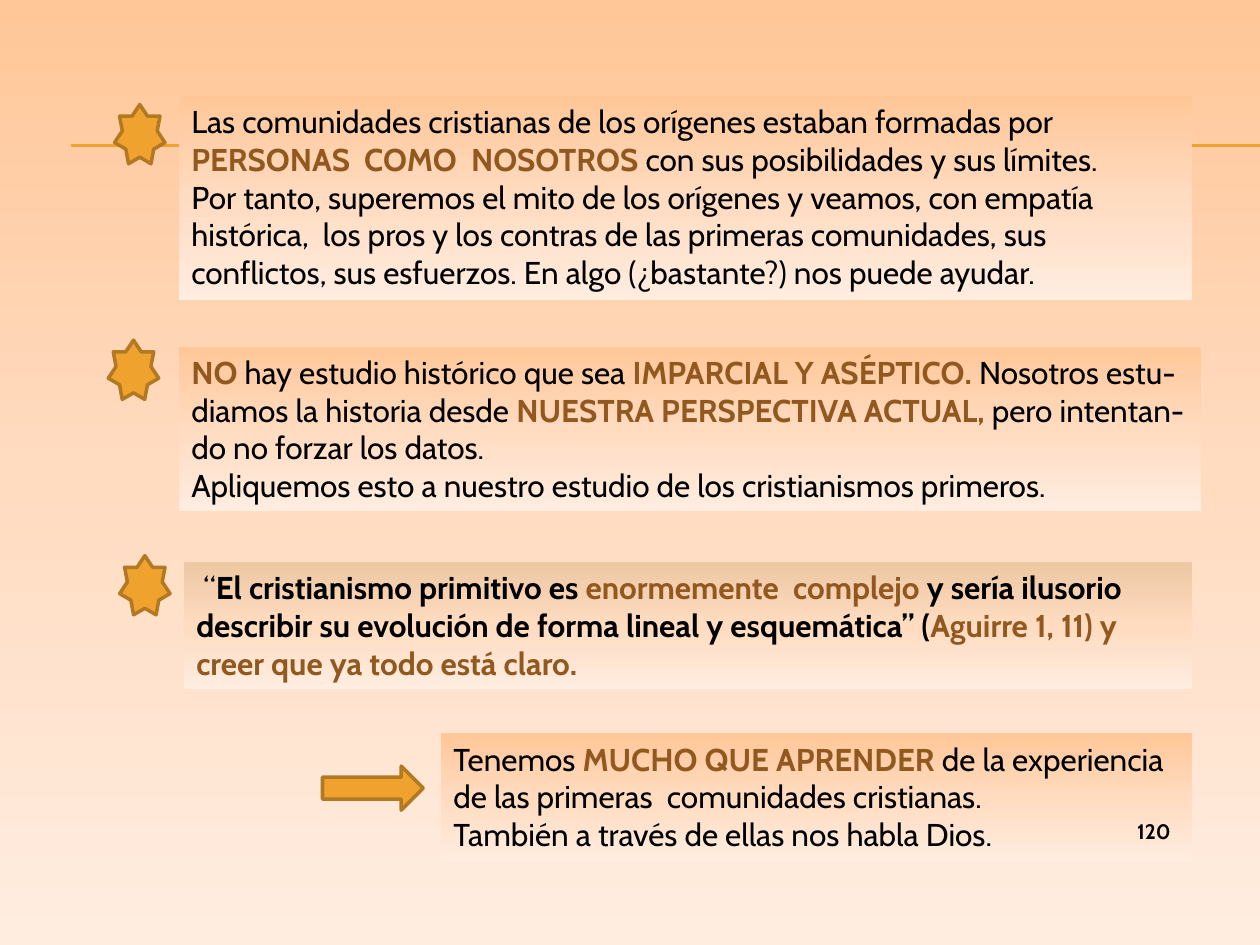
from copy import deepcopy

from pptx import Presentation
from pptx import util as u
from pptx.dml.color import RGBColor
from pptx.enum import shapes, text
from pptx.oxml.ns import qn
from pptx.util import Inches

COLORS = {
    "top": "FFC798", "tan": "ECC8A4", "middle": "FFDBC0", "bottom": "FFEDE0",
    "gold": "F0A22E", "outline": "B27822", "accent": "91581F", "ink": "000000",
}
FONT = "Cabin"
STAR = (0.4, 0.47)
ARROW = (0.8, 0.35)

# Run styles
PLAIN = ("ink", False)
STRONG = ("ink", True)
ACCENT = ("accent", True)

ORIGINS = [
    [("Las comunidades cristianas de los orígenes estaban formadas por ", PLAIN),
     ("PERSONAS  COMO  NOSOTROS", ACCENT),
     (" con sus posibilidades y sus límites.", PLAIN)],
    [("Por tanto, superemos el mito de los orígenes y veamos, con empatía "
      "histórica,  los pros y los contras de las primeras comunidades, sus "
      "conflictos, sus esfuerzos. En algo (¿bastante?) nos puede ayudar.", PLAIN)],
]
PERSPECTIVE = [
    [("NO", ACCENT),
     (" hay estudio histórico que sea ", PLAIN),
     ("IMPARCIAL Y ASÉPTICO. ", ACCENT),
     ("Nosotros estu-diamos la historia desde ", PLAIN),
     ("NUESTRA PERSPECTIVA ACTUAL, ", ACCENT),
     ("pero intentan- do no forzar los datos.", PLAIN)],
    [("Apliquemos esto a nuestro estudio de los cristianismos primeros.", PLAIN)],
]
QUOTE = [
    [(" “", PLAIN),
     ("El cristianismo primitivo es ", STRONG),
     ("enormemente  complejo ", ACCENT),
     ("y sería ilusorio describir su evolución de forma lineal y esquemática” (", STRONG),
     ("Aguirre 1, 11) y creer que ya todo está claro.", ACCENT)],
]
CONCLUSION = [
    [("Tenemos ", PLAIN),
     ("MUCHO QUE APRENDER ", ACCENT),
     ("de la experiencia", PLAIN)],
    [("de las primeras  comunidades cristianas.", PLAIN)],
    [("También a través de ellas nos habla Dios.", PLAIN)],
]


def rgb(name):
    return RGBColor.from_string(COLORS[name])


def fill_gradient(fill, parent, first="top"):
    """Give fill three stops running downwards; parent is the element holding it."""
    fill.gradient()
    fill.gradient_angle = 270
    stop_list = next(parent.iter(qn("a:gsLst")))
    stop_list.insert(1, deepcopy(stop_list[0]))
    for stop, position, name in zip(fill.gradient_stops, (0, 0.5, 1),
                                    (first, "middle", "bottom")):
        stop.position = position
        stop.color.rgb = rgb(name)


def add_runs(p, runs, size):
    for words, (color, bold) in runs:
        r = p.add_run()
        r.text = words
        for key, value in {"name": FONT, "size": u.Pt(size), "bold": bold}.items():
            setattr(r.font, key, value)
        r.font.color.rgb = rgb(color)


def add_panel(s, box, paragraphs, first="top"):
    sp = s.shapes.add_shape(shapes.MSO_SHAPE.RECTANGLE, *map(Inches, box))
    sp.shadow.inherit = False
    sp.line.fill.background()
    fill_gradient(sp.fill, sp._element, first)
    tf = sp.text_frame
    tf.word_wrap = True
    tf.vertical_anchor = text.MSO_ANCHOR.TOP
    for i, runs in enumerate(paragraphs):
        p = tf.add_paragraph() if i else tf.paragraphs[0]
        p.alignment = text.PP_ALIGN.LEFT
        add_runs(p, runs, 18)


def add_marker(s, kind, left, top, size):
    sp = s.shapes.add_shape(kind, *map(Inches, (left, top, *size)))
    sp.shadow.inherit = False
    sp.fill.solid()
    sp.fill.fore_color.rgb = rgb("gold")
    sp.line.color.rgb = rgb("outline")
    sp.line.width = u.Pt(2)


def add_starred_panel(s, box, star_left, paragraphs, first="top"):
    add_panel(s, box, paragraphs, first)
    add_marker(s, shapes.MSO_SHAPE.STAR_7_POINT, star_left, box[1] - 0.05 + (
        0.12 if box[1] < 1 else 0), STAR)


def add_conclusion(s, box):
    left, top = box[:2]
    add_panel(s, box, CONCLUSION)
    add_marker(s, shapes.MSO_SHAPE.RIGHT_ARROW, left - 0.94, top + 0.26, ARROW)


def add_rule(s, left, right, y):
    line = s.shapes.add_connector(shapes.MSO_CONNECTOR.STRAIGHT,
                                  *map(Inches, (left, y, right, y)))
    line.line.color.rgb = rgb("gold")
    line.line.width = u.Pt(0.75)
    properties = line._element.spPr
    properties.append(properties.makeelement(qn("a:effectLst"), {}))


def add_page_number(s, box, number):
    tf = s.shapes.add_textbox(*map(Inches, box)).text_frame
    tf.word_wrap = True
    p = tf.paragraphs[0]
    p.alignment = text.PP_ALIGN.RIGHT
    add_runs(p, [(number, STRONG)], 12)


def main():
    prs = Presentation()
    prs.slide_width, prs.slide_height = Inches(10), Inches(7.5)
    s = prs.slides.add_slide(prs.slide_layouts[6])
    fill_gradient(s.background.fill, s._element)
    for y in (1.15, 1.16):
        add_rule(s, 0.56, 10, y)
    add_conclusion(s, (3.5, 5.82, 5.96, 1.01))
    add_starred_panel(s, (1.46, 4.46, 8, 1.01), 0.95, QUOTE, "tan")
    add_starred_panel(s, (1.42, 2.75, 8.11, 1.31), 0.86, PERSPECTIVE)
    add_starred_panel(s, (1.42, 0.76, 8.04, 1.62), 0.91, ORIGINS)
    add_page_number(s, (8.56, 6.45, 0.83, 0.27), "120")
    prs.save("out.pptx")


if __name__ == "__main__":
    main()
